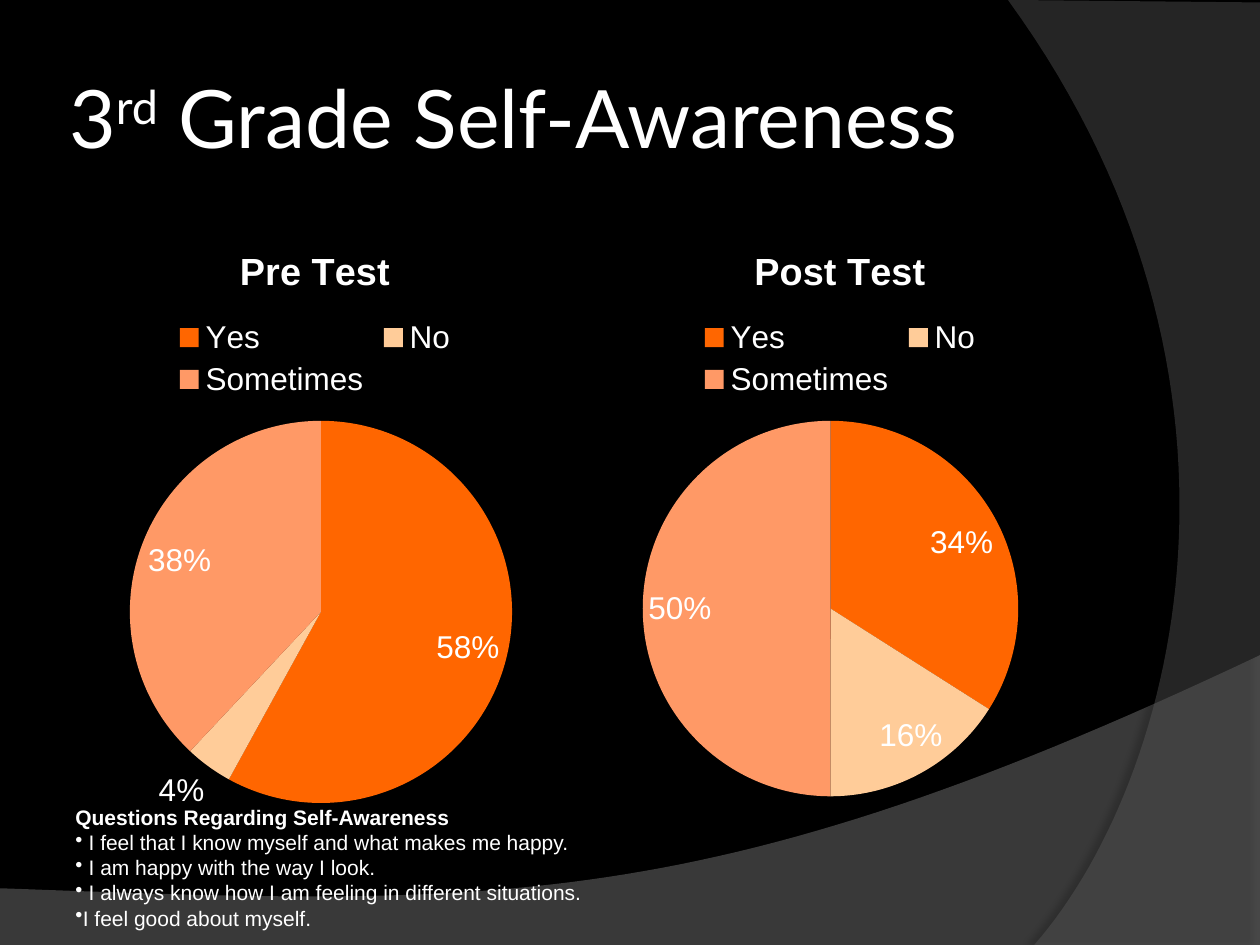
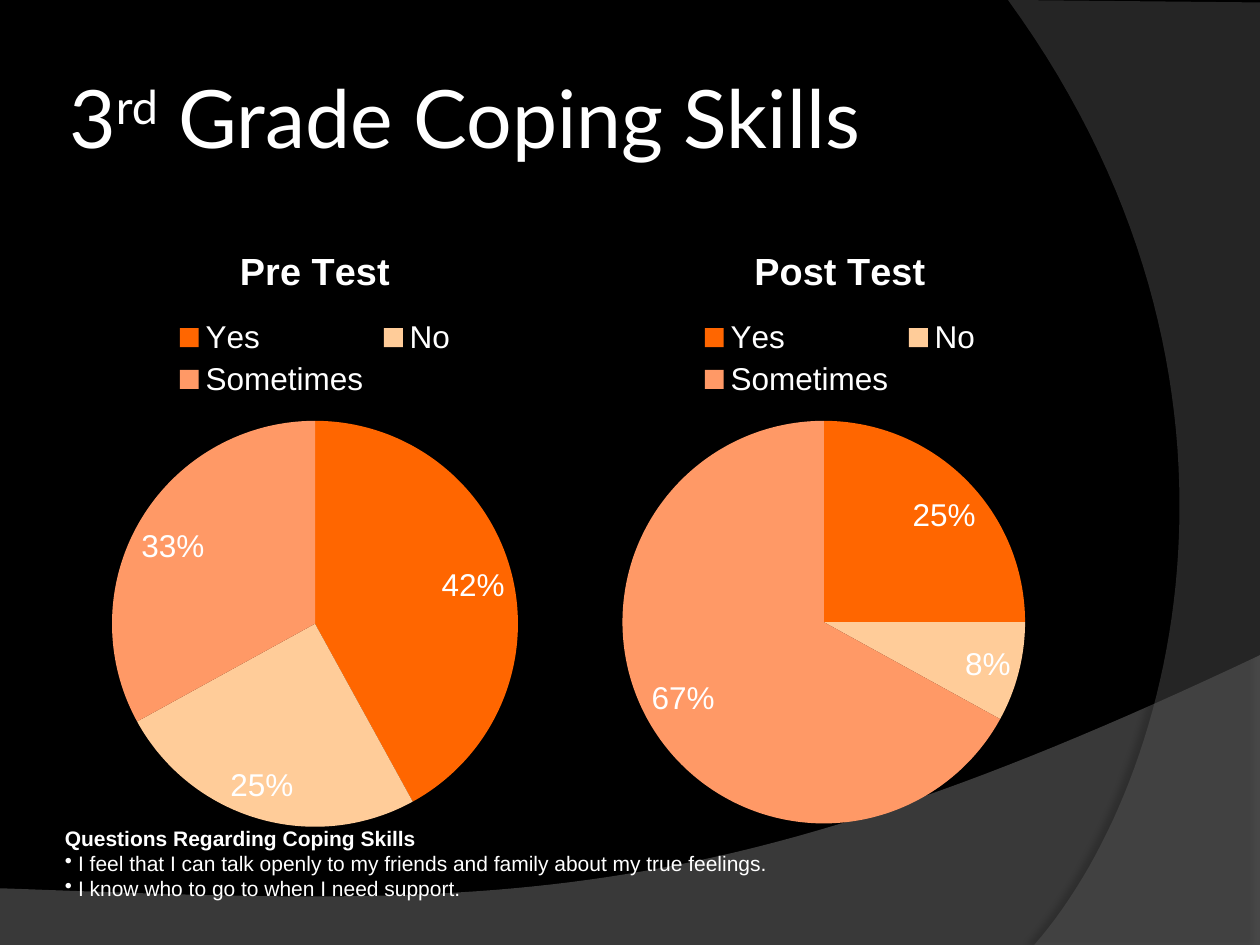
from lxml.etree import SubElement
from pptx import Presentation
from pptx.chart.data import CategoryChartData
from pptx.dml.color import RGBColor
from pptx.enum.chart import XL_CHART_TYPE, XL_LABEL_POSITION as LABEL, XL_LEGEND_POSITION as LEGEND
from pptx.enum.text import MSO_ANCHOR as ANCHOR, MSO_AUTO_SIZE as FIT
from pptx.oxml.ns import qn
from pptx.util import Inches, Pt

COLS, ROWS = 120, 90
BLACK, WHITE = "000000", "FFFFFF"
ANSWERS = {"Yes": "FF6600", "No": "FFCC99", "Sometimes": "FF9966"}
TITLE_FONT, BODY_FONT = "Lato", "Arial"


def rgb(value):
    return RGBColor.from_string(value)


def curve(p0, p1, p2, p3, steps=60):
    """Points of a cubic Bezier curve, without its start."""
    ts = [i / steps for i in range(1, steps + 1)]
    return [tuple((1 - t) ** 3 * a + 3 * t * (1 - t) ** 2 * b
                  + 3 * t * t * (1 - t) * c + t ** 3 * d
                  for a, b, c, d in zip(p0, p1, p2, p3)) for t in ts]


# Grid points, fill, opacity, then shadow opacity, distance and direction.
BANDS = [
    ([(0, 84.6), (0, 90), (120, 90), (120, 62.4),
      *curve((120, 62.4), (67.1, 87.5), (46.9, 86.3), (0, 84.6))],
     "7F7F7F", 45, 35, 3.5, 270),
    ([(120, 0.24), (120, 90), (98.5, 90),
      *curve((98.5, 90), (112.2, 74.3), (122.2, 36), (96, 0))],
     "5E5E5E", 40, 45, 4, 180),
]


class Deck:
    def __init__(self):
        self.prs = Presentation()
        self.prs.slide_width, self.prs.slide_height = Inches(10), Inches(7.5)
        self.s = None

    def at(self, *lengths):
        """Turn alternating columns and rows into slide lengths."""
        units = (self.prs.slide_width / COLS, self.prs.slide_height / ROWS)
        return [round(n * units[i % 2]) for i, n in enumerate(lengths)]

    def slide(self):
        self.s = self.prs.slides.add_slide(self.prs.slide_layouts[6])
        fill = self.s.background.fill
        fill.solid()
        fill.fore_color.rgb = rgb(BLACK)
        for band in BANDS:
            self.band(*band)

    def band(self, points, color, opacity, shade, distance, direction):
        start, *rest = [self.at(*point) for point in points]
        outline = self.s.shapes.build_freeform(*start)
        outline.add_line_segments(rest, close=True)
        sp = outline.convert_to_shape()
        sp.line.fill.background()
        sp.fill.solid()
        sp.fill.fore_color.rgb = rgb(color)
        sp.shadow.inherit = False
        pr = sp.element.spPr
        clr = pr.find(qn("a:solidFill")).find(qn("a:srgbClr"))
        SubElement(clr, qn("a:alpha"), val=str(opacity * 1000))
        shadow = SubElement(pr.find(qn("a:effectLst")), qn("a:outerShdw"),
                            blurRad=str(Pt(4)), dist=str(Pt(distance)),
                            dir=str(direction * 60000), rotWithShape="0")
        clr = SubElement(shadow, qn("a:srgbClr"), val=BLACK)
        SubElement(clr, qn("a:alpha"), val=str(shade * 1000))

    def font(self, font, size, name=BODY_FONT, bold=False):
        font.size, font.name, font.bold = Pt(size), name, bold
        font.color.rgb = rgb(WHITE)

    def text_frame(self, *box):
        tf = self.s.shapes.add_textbox(*self.at(*box)).text_frame
        tf.word_wrap = True
        return tf

    def run(self, p, text, *style):
        r = p.add_run()
        r.text = text
        self.font(r.font, *style)
        return r

    def title(self, topic):
        tf = self.text_frame(6, 3.6, 98, 15)
        tf.vertical_anchor = ANCHOR.MIDDLE
        tf.margin_left = tf.margin_right = Inches(0.05)
        p = tf.paragraphs[0]
        for text, raised in (("3", False), ("rd", True), (f" Grade {topic}", False)):
            r = self.run(p, text, 46, TITLE_FONT)
            if raised:
                r.font._element.set("baseline", "30000")

    def pie(self, name, values, col):
        data = CategoryChartData()
        data.categories = list(ANSWERS)
        data.add_series(name, values)
        chart = self.s.shapes.add_chart(
            XL_CHART_TYPE.PIE, *self.at(col, 21, 48, 59.4), data).chart
        self.font(chart.font, 18)
        chart.has_title = True
        self.run(chart.chart_title.text_frame.paragraphs[0], name, 21.6, BODY_FONT, True)
        chart.has_legend = True
        chart.legend.position = LEGEND.TOP
        chart.legend.include_in_layout = False
        self.font(chart.legend.font, 18)
        plot = chart.plots[0]
        plot.vary_by_categories = True
        for i, color in enumerate(ANSWERS.values()):
            fill = plot.series[0].points[i].format.fill
            fill.solid()
            fill.fore_color.rgb = rgb(color)
        plot.has_data_labels = True
        labels = plot.data_labels
        labels.show_percentage, labels.show_value = True, False
        labels.number_format, labels.number_format_is_linked = "0%", False
        labels.position = LABEL.BEST_FIT
        self.font(labels.font, 18)

    def questions(self, topic, items, box):
        tf = self.text_frame(*box)
        tf.auto_size = FIT.SHAPE_TO_FIT_TEXT
        self.run(tf.paragraphs[0], f"Questions Regarding {topic}", 12, BODY_FONT, True)
        for item in items:
            p = tf.add_paragraph()
            SubElement(p._p.get_or_add_pPr(), qn("a:buChar"), char="•")
            self.run(p, item, 12)


SURVEYS = [
    ("Self-Awareness", (58, 4, 38), (34, 16, 50), (6, 76, 105, 13.3),
     [" I feel that I know myself and what makes me happy.",
      " I am happy with the way I look.",
      " I always know how I am feeling in different situations.",
      "I feel good about myself."]),
    ("Coping Skills", (42, 25, 33), (25, 8, 67), (5, 78, 101, 8.5),
     [" I feel that I can talk openly to my friends and family about my true feelings.",
      " I know who to go to when I need support."]),
]


def main():
    deck = Deck()
    for topic, pre, post, box, items in SURVEYS:
        deck.slide()
        deck.title(topic)
        deck.pie("Pre Test", pre, 6)
        deck.pie("Post Test", post, 56)
        deck.questions(topic, items, box)
    deck.prs.save("out.pptx")


if __name__ == "__main__":
    main()
